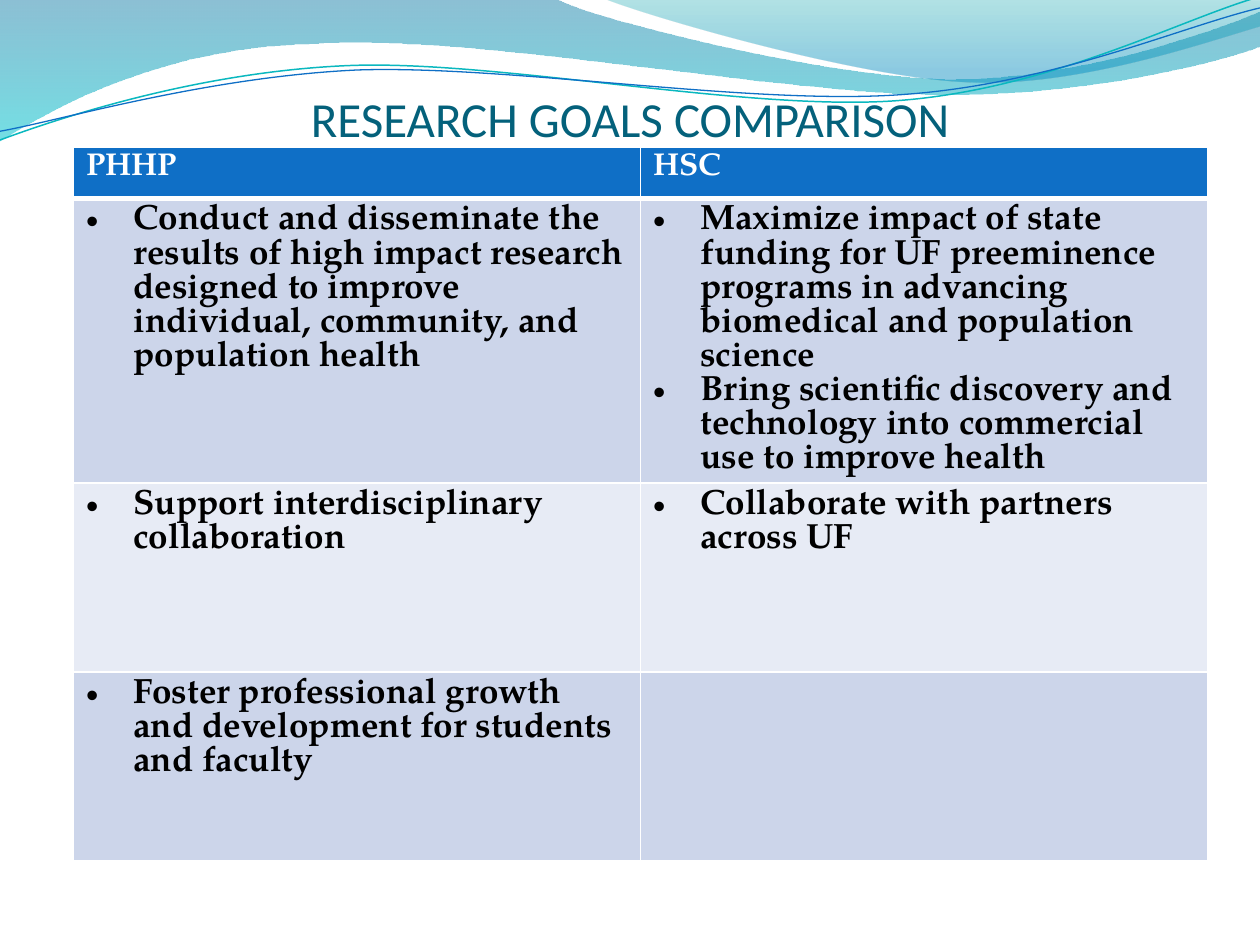
from dataclasses import dataclass
from typing import Any, Optional

from lxml import etree
from pptx import Presentation
from pptx.dml.color import RGBColor
from pptx.enum import text
from pptx.oxml import ns
from pptx.util import Pt

WHITE = RGBColor(0xFF, 0xFF, 0xFF)
BLACK = RGBColor(0x00, 0x00, 0x00)
BLUE = RGBColor(0x0F, 0x6F, 0xC6)
TEAL = RGBColor(0x0A, 0xB8, 0xBF)
NAVY = RGBColor(0x04, 0x61, 0x7B)
DEEP = RGBColor(0x00, 0x74, 0xA1)
CYAN = RGBColor(0x00, 0xC6, 0xCF)
SEA = RGBColor(0x00, 0xA1, 0xA9)
SKY = RGBColor(0x00, 0x8B, 0xBF)
BAND = RGBColor(0xCC, 0xD5, 0xEA)
PALE = RGBColor(0xE7, 0xEB, 0xF5)

SERIF = "TeX Gyre Pagella"
HEAD = {"name": SERIF, "size": Pt(18), "bold": True}
BODY = {"name": SERIF, "size": Pt(20), "bold": True}
TITLE = {"name": "Calibri", "size": Pt(28), "bold": False}


@dataclass
class Stop:
    pos: float
    color: RGBColor
    alpha: int


@dataclass
class Wave:
    """Two numbers in a leg make a line, six make a Bezier curve."""
    start: tuple
    legs: list
    stops: Optional[list] = None
    color: Optional[RGBColor] = None
    width: float = 0


@dataclass
class Row:
    height: float
    fill: RGBColor
    cells: list


WAVES = [
    Wave((0, 0), [(317, -1), (343, 12, 478, 45, 546, 45),
                  (614, 45, 690, 19, 720, 6.5), (721, 26),
                  (708, 32, 626, 55, 537, 54), (447, 54, 275, 20, 185, 24.5),
                  (93, 26, 33, 60, -1, 81)],
         stops=[Stop(0, DEEP, 45), Stop(1, CYAN, 55)]),
    Wave((345, -1), [(366, 8, 491, 45, 554, 47),
                     (616, 50, 692, 23, 720, 15), (720, 0)],
         stops=[Stop(0, SEA, 30), Stop(0.8, SKY, 45)]),
    Wave((0, 80), [(35, 67, 114, 41, 199, 37.5), (284, 34, 427, 64, 513, 57.5),
                   (600, 51, 675, 11, 718.5, -1.5)], color=TEAL, width=0.85),
    Wave((0, 75), [(34, 69, 118, 44, 204, 40), (290, 37, 430, 60.5, 516, 54),
                   (602, 48, 675.5, 15, 720, 4.5)], color=BLUE, width=0.75),
]

ROWS = [
    Row(29.5, BLUE, [["PHHP"], ["HSC"]]),
    Row(162.5, BAND, [
        ["Conduct and disseminate the results of high impact research designed "
         "to improve individual, community, and population health"],
        ["Maximize impact of state funding for UF preeminence programs in "
         "advancing biomedical and population science",
         "Bring scientific discovery and technology into commercial use to "
         "improve health"]]),
    Row(108, PALE, [["Support interdisciplinary collaboration"],
                    ["Collaborate with partners across UF"]]),
    Row(108, BAND, [["Foster professional growth and development for students "
                     "and faculty"], []]),
]


def put(item: Any, values: dict) -> None:
    for key, value in values.items():
        setattr(item, key, value)


def write(para: Any, words: str, style: dict, color: RGBColor) -> None:
    run = para.add_run()
    run.text = words
    put(run.font, style)
    run.font.color.rgb = color


def bend(shape: Any, legs: list) -> None:
    """Join each three line segments of a six-number leg into one curve."""
    lines = iter(list(shape._element.iter(ns.qn("a:lnTo"))))
    for leg in legs:
        first = next(lines)
        if len(leg) == 6:
            first.tag = ns.qn("a:cubicBezTo")
            for line in (next(lines), next(lines)):
                first.append(line[0])
                line.getparent().remove(line)


def shade(shape: Any, stops: list) -> None:
    shape.fill.gradient()
    shape.fill.gradient_angle = 270
    for stop, goal in zip(shape.fill.gradient_stops, stops):
        stop.position = goal.pos
        stop.color.rgb = goal.color
    for node, goal in zip(shape._element.spPr.iter(ns.qn("a:srgbClr")), stops):
        etree.SubElement(node, ns.qn("a:alpha"), val=str(goal.alpha * 1000))


def draw_wave(slide: Any, wave: Wave) -> None:
    form = slide.shapes.build_freeform(*map(Pt, wave.start))
    spots = [(Pt(leg[i]), Pt(leg[i + 1]))
             for leg in wave.legs for i in range(0, len(leg), 2)]
    form.add_line_segments(spots, close=bool(wave.stops))
    shape = form.convert_to_shape()
    bend(shape, wave.legs)
    shape.shadow.inherit = False
    if wave.stops:
        shade(shape, wave.stops)
        shape.line.fill.background()
    else:
        shape.fill.background()
        shape.line.color.rgb = wave.color
        shape.line.width = Pt(wave.width)


def draw_title(slide: Any) -> None:
    frame = slide.shapes.add_textbox(Pt(36), Pt(21.5), Pt(648), Pt(62.5)).text_frame
    put(frame, {"word_wrap": True, "vertical_anchor": text.MSO_ANCHOR.BOTTOM,
                "margin_left": 0, "margin_right": 0,
                "margin_top": Pt(3.6), "margin_bottom": 0})
    para = frame.paragraphs[0]
    para.alignment = text.PP_ALIGN.CENTER
    write(para, "RESEARCH GOALS COMPARISON", TITLE, NAVY)


def edge(cell: Any, low: float) -> None:
    """Add white borders; low is the width of the bottom one."""
    props = cell._tc.get_or_add_tcPr()
    sides = {"lnL": 1, "lnR": 1, "lnT": 1, "lnB": low}
    for spot, (side, width) in enumerate(sides.items()):
        line = etree.Element(ns.qn("a:" + side), w=str(Pt(width)))
        fill = etree.SubElement(line, ns.qn("a:solidFill"))
        etree.SubElement(fill, ns.qn("a:srgbClr"), val=str(WHITE))
        props.insert(spot, line)


def bullet(para: Any) -> None:
    para.line_spacing = Pt(19.5)
    props = para._p.get_or_add_pPr()
    for key, value in {"marL": Pt(27), "indent": Pt(-27)}.items():
        props.set(key, str(value))
    etree.SubElement(props, ns.qn("a:buFont"), typeface="Arial")
    etree.SubElement(props, ns.qn("a:buChar"), char="•")


def draw_table(slide: Any) -> None:
    table = slide.shapes.add_table(len(ROWS), 2, Pt(42), Pt(84), Pt(648),
                                   Pt(sum(row.height for row in ROWS))).table
    for r, row in enumerate(ROWS):
        table.rows[r].height = Pt(row.height)
        top = r == 0
        for c, lines in enumerate(row.cells):
            cell = table.cell(r, c)
            cell.margin_bottom = 0
            cell.fill.solid()
            cell.fill.fore_color.rgb = row.fill
            edge(cell, 3 if top else 1)
            frame = cell.text_frame
            for i, words in enumerate(lines):
                para = frame.add_paragraph() if i else frame.paragraphs[0]
                if not top:
                    bullet(para)
                write(para, words, HEAD if top else BODY, WHITE if top else BLACK)


def main() -> None:
    deck = Presentation()
    put(deck, {"slide_width": Pt(720), "slide_height": Pt(540)})
    slide = deck.slides.add_slide(deck.slide_layouts[6])
    for wave in WAVES:
        draw_wave(slide, wave)
    draw_title(slide)
    draw_table(slide)
    deck.save("out.pptx")


if __name__ == "__main__":
    main()
